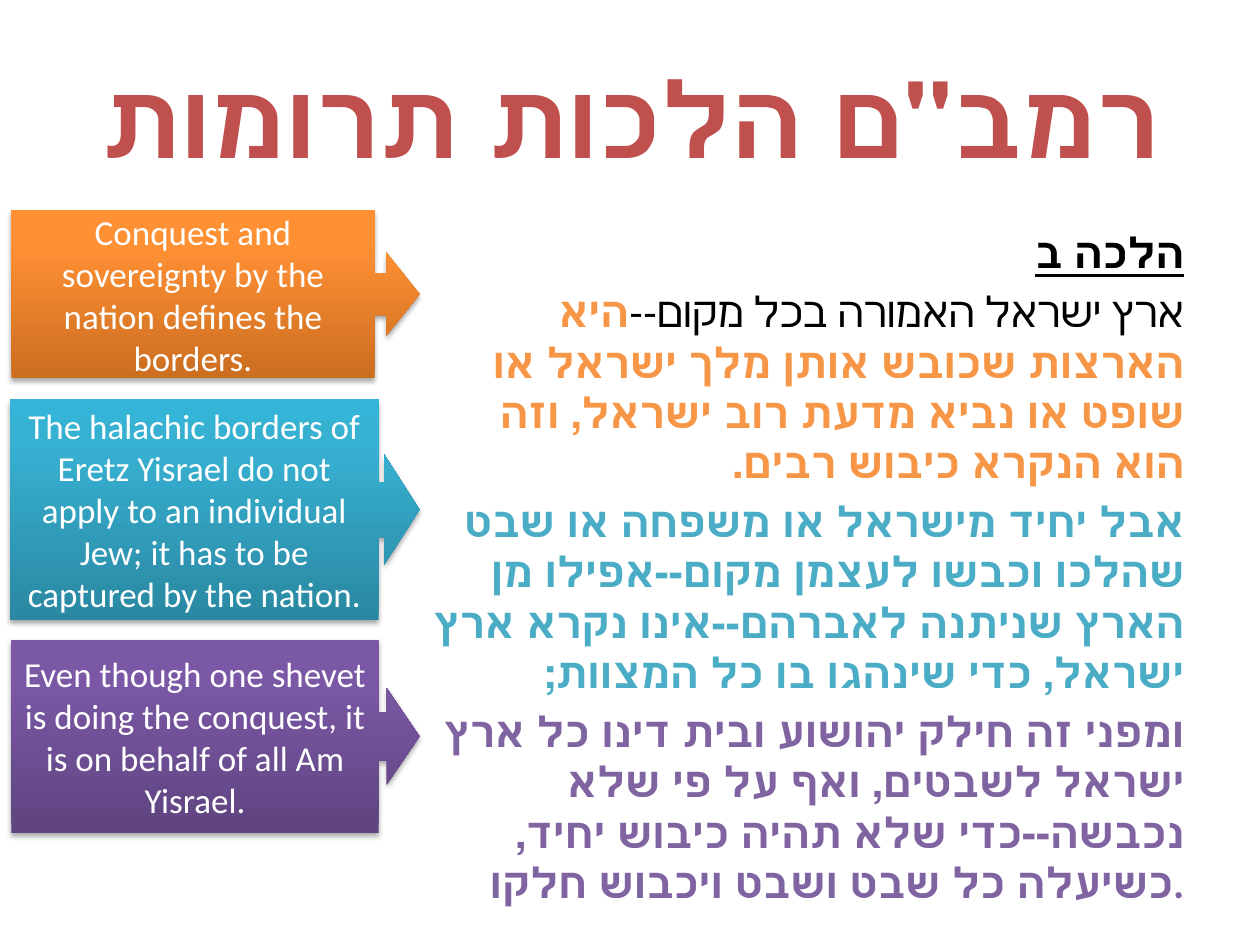
"""Build a slide of Hebrew law passages with three English arrow callouts."""
from copy import deepcopy
from typing import NamedTuple

from lxml.etree import SubElement
from pptx import Presentation
from pptx.dml.color import RGBColor as RGB
from pptx.enum.shapes import MSO_SHAPE as SHAPE
from pptx.enum.text import MSO_ANCHOR as ANCHOR, MSO_AUTO_SIZE as AUTOSIZE, PP_ALIGN as ALIGN
from pptx.oxml.ns import qn
from pptx.util import Emu, Pt

PX = 9144
COLORS = {
    "title": "C0504D", "black": "000000", "white": "FFFFFF",
    "orange": "F79646", "teal": "4BACC6", "purple": "8064A2",
}
GRADIENTS = {
    "orange": ("CC6E20", "FF9034", "FF9136"),
    "teal": ("2A88A2", "37B1D2", "34B4D6"),
    "purple": ("5F4480", "7B58A6", "7C57A8"),
}
STOPS = (0, 0.8, 1)


class Box(NamedTuple):
    left: int
    top: int
    width: int
    height: int


class Span(NamedTuple):
    text: str
    color: str
    bold: bool = True
    underline: bool = False


class Passage(NamedTuple):
    spans: list[Span]
    rtl: bool = True


class Callout(NamedTuple):
    text: str
    color: str
    box: Box
    head: float
    body: float


PASSAGES = [
    Passage([Span("הלכה ב", "black", underline=True)]),
    Passage([
        Span("ארץ ישראל האמורה בכל מקום--", "black", bold=False),
        Span("היא הארצות שכובש אותן מלך ישראל או שופט או נביא מדעת רוב ישראל, "
             "וזה הוא הנקרא כיבוש רבים.", "orange"),
    ]),
    Passage([Span("אבל יחיד מישראל או משפחה או שבט שהלכו וכבשו לעצמן מקום--אפילו מן "
                  "הארץ שניתנה לאברהם--אינו נקרא ארץ ישראל, כדי שינהגו בו כל המצוות;",
                  "teal")]),
    Passage([Span("ומפני זה חילק יהושוע ובית דינו כל ארץ ישראל לשבטים, ואף על פי שלא "
                  "נכבשה--כדי שלא תהיה כיבוש יחיד, כשיעלה כל שבט ושבט ויכבוש חלקו.",
                  "purple")], rtl=False),
]
CALLOUTS = [
    Callout("Conquest and sovereignty by the nation defines the borders.",
            "orange", Box(9, 167, 324, 133), 0.2, 0.89),
    Callout("The halachic borders of Eretz Yisrael do not apply to an individual Jew; "
            "it has to be captured by the nation.",
            "teal", Box(8, 317, 325, 175), 0.16, 0.9),
    Callout("Even though one shevet is doing the conquest, it is on behalf of all Am Yisrael.",
            "purple", Box(9, 508, 324, 153), 0.17, 0.9),
]


def set_all(obj, values: dict) -> None:
    for name, value in values.items():
        setattr(obj, name, value)


def place(sp, box: Box) -> None:
    set_all(sp, {name: Emu(n * PX) for name, n in box._asdict().items()})


def add_run(p, span: Span, size: int) -> None:
    r = p.add_run()
    r.text = span.text
    set_all(r.font, {"name": "Calibri", "size": Pt(size), "bold": span.bold,
                     "underline": span.underline})
    r.font.color.rgb = RGB.from_string(COLORS[span.color])


def fill_title(sp, text: str) -> None:
    place(sp, Box(50, 30, 900, 125))
    tf = sp.text_frame
    set_all(tf, {"vertical_anchor": ANCHOR.MIDDLE, "auto_size": AUTOSIZE.NONE})
    p = tf.paragraphs[0]
    p.alignment = ALIGN.CENTER
    add_run(p, Span(text, "title"), 60)


def fill_body(sp, passages: list[Passage]) -> None:
    place(sp, Box(325, 175, 625, 495))
    tf = sp.text_frame
    tf.auto_size = AUTOSIZE.NONE
    for i, passage in enumerate(passages):
        p = tf.add_paragraph() if i else tf.paragraphs[0]
        p.alignment = ALIGN.RIGHT
        pPr = p._p.get_or_add_pPr()
        for name, value in {"marL": "0", "indent": "0", "rtl": str(int(passage.rtl))}.items():
            pPr.set(name, value)
        SubElement(pPr, qn("a:buNone"))
        for span in passage.spans:
            add_run(p, span, 24)


def add_gradient(sp, colors: tuple[str, ...]) -> None:
    sp.fill.gradient()
    sp.fill.gradient_angle = 90
    gs_list = sp._element.spPr.find(qn("a:gradFill")).find(qn("a:gsLst"))
    gs_list.append(deepcopy(gs_list[-1]))
    for stop, position, color in zip(sp.fill.gradient_stops, STOPS, colors):
        stop.position = position
        stop.color.rgb = RGB.from_string(color)


def add_shadow(sp) -> None:
    sp.shadow.inherit = False
    effects = sp._element.spPr.find(qn("a:effectLst"))
    shadow = SubElement(effects, qn("a:outerShdw"), blurRad=str(Pt(3.1)), dist=str(Pt(1.8)),
                        dir="5400000", rotWithShape="0")
    color = SubElement(shadow, qn("a:srgbClr"), val=COLORS["black"])
    SubElement(color, qn("a:alpha"), val="35000")


def add_callout(s, callout: Callout) -> None:
    sp = s.shapes.add_shape(SHAPE.RIGHT_ARROW_CALLOUT, *(n * PX for n in callout.box))
    for i, value in enumerate((0.25, 0.25, callout.head, callout.body)):
        sp.adjustments[i] = value
    add_gradient(sp, GRADIENTS[callout.color])
    sp.line.fill.background()
    add_shadow(sp)
    tf = sp.text_frame
    set_all(tf, {"word_wrap": True, "vertical_anchor": ANCHOR.MIDDLE})
    p = tf.paragraphs[0]
    p.alignment = ALIGN.CENTER
    add_run(p, Span(callout.text, "white", bold=False), 20)


def main() -> None:
    prs = Presentation()
    set_all(prs, {"slide_width": Emu(1000 * PX), "slide_height": Emu(750 * PX)})
    s = prs.slides.add_slide(prs.slide_layouts[1])
    fill_title(s.shapes.title, 'רמב"ם הלכות תרומות')
    fill_body(s.placeholders[1], PASSAGES)
    for callout in CALLOUTS:
        add_callout(s, callout)
    prs.save("out.pptx")


if __name__ == "__main__":
    main()
